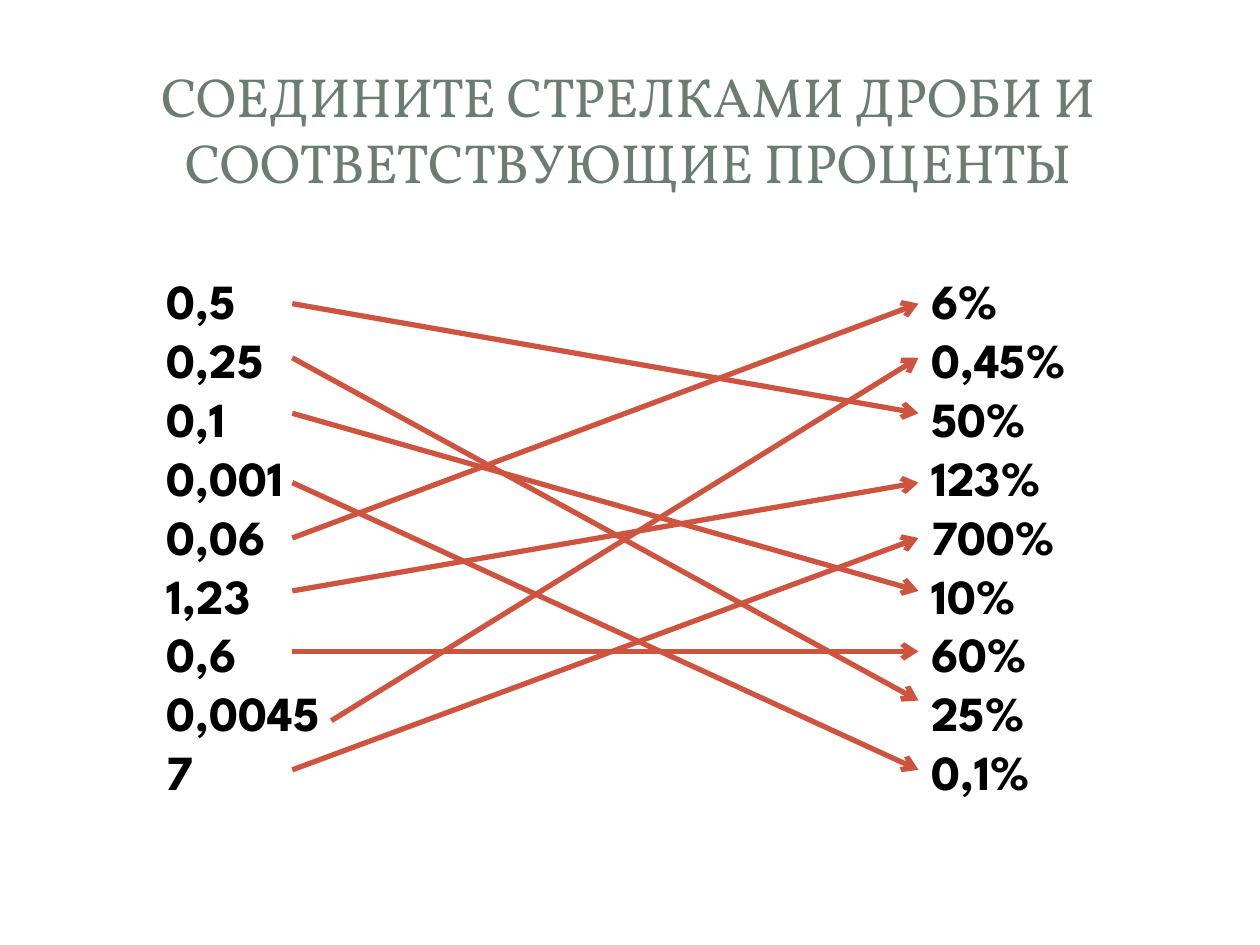
import dataclasses

import lxml.etree
import pptx
import pptx.dml.color
import pptx.enum.shapes
import pptx.enum.text
import pptx.oxml.ns
import pptx.presentation
import pptx.slide
import pptx.util
from pptx.util import Inches


@dataclasses.dataclass(frozen=True)
class Theme:
    title_font: str = "Vollkorn"
    body_font: str = "League Spartan"
    title_size: float = 31.5
    body_size: float = 28
    title_color: str = "6B7D72"
    body_color: str = "000000"
    arrow_color: str = "CF543F"
    arrow_width: float = 3


@dataclasses.dataclass(frozen=True)
class Box:
    left: float
    top: float
    width: float
    height: float


@dataclasses.dataclass(frozen=True)
class Match:
    fraction: str
    percent: str
    start_x: float = 2.32


THEME = Theme()
TITLE = "СОЕДИНИТЕ СТРЕЛКАМИ ДРОБИ И СООТВЕТСТВУЮЩИЕ ПРОЦЕНТЫ"
TITLE_BOX = Box(0.47, 0.45, 9.03, 1.14)
FRACTION_BOX = Box(1.22, 2.1, 1.6, 4.34)
PERCENT_BOX = Box(7.29, 2.1, 1.4, 4.34)
ARROW_END_X = 7.29

MATCHES = [
    Match("0,5", "50%"),
    Match("0,25", "25%"),
    Match("0,1", "10%"),
    Match("0,001", "0,1%"),
    Match("0,06", "6%"),
    Match("1,23", "123%"),
    Match("0,6", "60%"),
    Match("0,0045", "0,45%", 2.63),
    Match("7", "700%"),
]
PERCENTS = ["6%", "0,45%", "50%", "123%", "700%", "10%", "60%", "25%", "0,1%"]
START_ROWS = [2.41, 2.84, 3.28, 3.83, 4.27, 4.69, 5.17, 5.72, 6.11]
END_ROWS = dict(zip(PERCENTS, [2.41, 2.84, 3.28, 3.83, 4.27, 4.69, 5.17, 5.56, 6.11]))


def place(shape, box: Box) -> None:
    shape.left, shape.top = Inches(box.left), Inches(box.top)
    shape.width, shape.height = Inches(box.width), Inches(box.height)
    shape.text_frame.word_wrap = True
    shape.text_frame.auto_size = pptx.enum.text.MSO_AUTO_SIZE.NONE


def style_font(font, name: str, size: float, color: str, bold: bool) -> None:
    font.name = name
    font.size = pptx.util.Pt(size)
    font.bold = bold
    font.color.rgb = pptx.dml.color.RGBColor.from_string(color)


def fill_title(shape, text: str) -> None:
    place(shape, TITLE_BOX)
    shape.text_frame.text = text
    shape.text_frame.vertical_anchor = pptx.enum.text.MSO_ANCHOR.MIDDLE
    paragraph = shape.text_frame.paragraphs[0]
    paragraph.alignment = pptx.enum.text.PP_ALIGN.CENTER
    paragraph.line_spacing = 1.0
    style_font(paragraph.runs[0].font, THEME.title_font, THEME.title_size,
               THEME.title_color, False)


def fill_list(shape, box: Box, items: list[str]) -> None:
    place(shape, box)
    shape.text_frame.text = "\n".join(items)
    for paragraph in shape.text_frame.paragraphs:
        paragraph.space_before = pptx.util.Pt(0)
        properties = paragraph._p.get_or_add_pPr()
        properties.set("marL", "0")
        properties.set("indent", "0")
        lxml.etree.SubElement(properties, pptx.oxml.ns.qn("a:buNone"))
        style_font(paragraph.runs[0].font, THEME.body_font, THEME.body_size,
                   THEME.body_color, True)


def add_arrow(slide: pptx.slide.Slide, match: Match, start_y: float) -> None:
    connector = slide.shapes.add_connector(
        pptx.enum.shapes.MSO_CONNECTOR.STRAIGHT,
        Inches(match.start_x), Inches(start_y),
        Inches(ARROW_END_X), Inches(END_ROWS[match.percent]),
    )
    connector.line.width = pptx.util.Pt(THEME.arrow_width)
    connector.line.color.rgb = pptx.dml.color.RGBColor.from_string(THEME.arrow_color)
    qn = pptx.oxml.ns.qn
    lxml.etree.SubElement(connector.line._get_or_add_ln(), qn("a:tailEnd"), type="arrow")
    lxml.etree.SubElement(connector._element.spPr, qn("a:effectLst"))


def build() -> pptx.presentation.Presentation:
    presentation = pptx.Presentation()
    presentation.slide_width = Inches(10)
    presentation.slide_height = Inches(7.5)
    slide = presentation.slides.add_slide(
        presentation.slide_layouts.get_by_name("Two Content"))
    for placeholder in list(slide.placeholders)[3:]:
        placeholder._element.getparent().remove(placeholder._element)
    fill_title(slide.shapes.title, TITLE)
    fill_list(slide.placeholders[1], FRACTION_BOX, [match.fraction for match in MATCHES])
    fill_list(slide.placeholders[2], PERCENT_BOX, PERCENTS)
    for match, start_y in zip(MATCHES, START_ROWS):
        add_arrow(slide, match, start_y)
    return presentation


if __name__ == "__main__":
    build().save("out.pptx")
